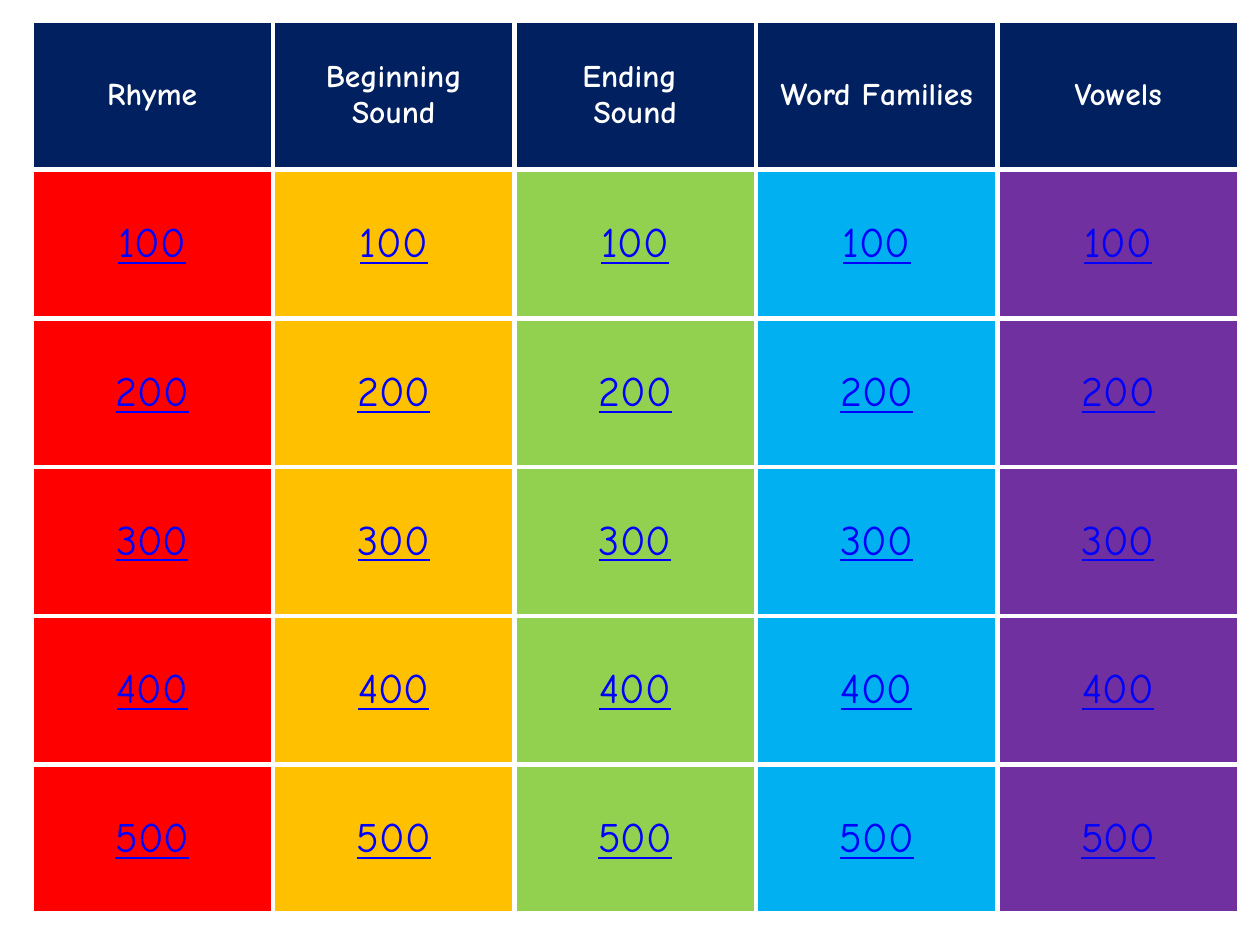
from lxml import etree
from pptx import Presentation
from pptx.dml.color import RGBColor
from pptx.enum.text import MSO_ANCHOR, PP_ALIGN
from pptx.oxml.ns import qn
from pptx.util import Pt

CENTER = PP_ALIGN.CENTER
MIDDLE = MSO_ANCHOR.MIDDLE
FONT = "Comic Neue"
BLANK_LAYOUT = 6

COLORS = {
    "header": "002060",
    "white": "FFFFFF",
    "points": "0000FF",
    "red": "FF0000",
    "gold": "FFC000",
    "green": "92D050",
    "sky": "00B0F0",
    "purple": "7030A0",
}
CATEGORIES = [
    ("Rhyme", "red"),
    ("Beginning Sound", "gold"),
    ("Ending \nSound", "green"),
    ("Word Families", "sky"),
    ("Vowels", "purple"),
]
POINTS = [100, 200, 300, 400, 500]

LEFT, TOP = 18, 12
COLUMN_WIDTH, ROW_HEIGHT = 138, 85
BORDER_WIDTH = 3


def add_borders(cell):
    properties = cell._tc.get_or_add_tcPr()
    for side in ("a:lnL", "a:lnR", "a:lnT", "a:lnB"):
        line = etree.SubElement(properties, qn(side), w=str(Pt(BORDER_WIDTH)))
        fill = etree.SubElement(line, qn("a:solidFill"))
        etree.SubElement(fill, qn("a:srgbClr"), val=COLORS["white"])


def fill_cell(cell, text, fill, color, size, bold=False, underline=False):
    add_borders(cell)
    cell.fill.solid()
    cell.fill.fore_color.rgb = RGBColor.from_string(COLORS[fill])
    cell.vertical_anchor = MIDDLE
    cell.text_frame.text = text
    for para in cell.text_frame.paragraphs:
        para.alignment = CENTER
        for span in para.runs:
            span.font.name = FONT
            span.font.size = Pt(size)
            span.font.bold = bold
            span.font.underline = underline
            span.font.color.rgb = RGBColor.from_string(COLORS[color])


deck = Presentation()
deck.slide_width, deck.slide_height = Pt(720), Pt(540)
page = deck.slides.add_slide(deck.slide_layouts[BLANK_LAYOUT])

row_count, column_count = len(POINTS) + 1, len(CATEGORIES)
board = page.shapes.add_table(
    row_count, column_count, Pt(LEFT), Pt(TOP),
    Pt(column_count * COLUMN_WIDTH), Pt(row_count * ROW_HEIGHT),
).table

for column, (category, color) in enumerate(CATEGORIES):
    fill_cell(board.cell(0, column), category, "header", "white", 18, bold=True)
    for row, points in enumerate(POINTS, start=1):
        fill_cell(board.cell(row, column), str(points), color, "points", 24, underline=True)

deck.save("out.pptx")
